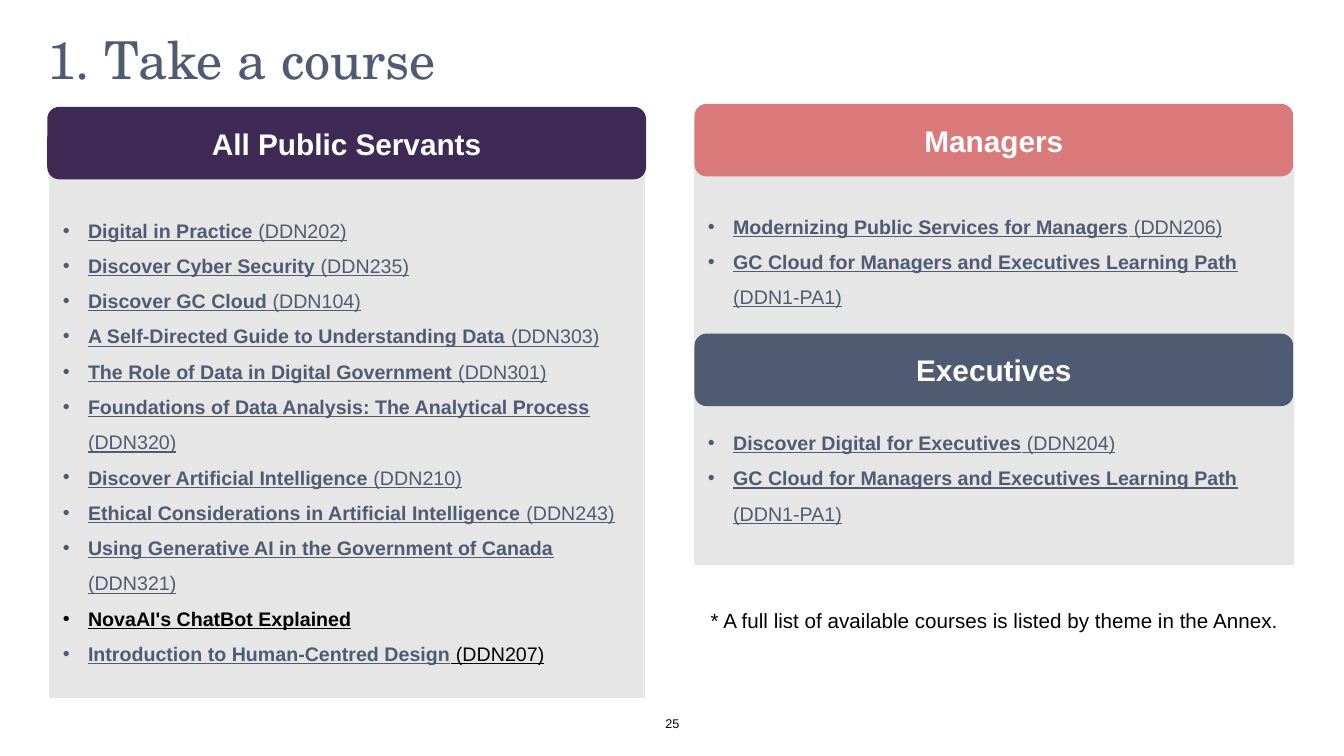
from lxml.etree import SubElement
from pptx import Presentation
from pptx.dml.color import RGBColor
from pptx.enum.shapes import MSO_SHAPE as Shape
from pptx.enum.text import MSO_ANCHOR as Anchor, MSO_AUTO_SIZE as AutoSize, PP_ALIGN as Align
from pptx.oxml.ns import qn
from pptx.util import Pt

SLATE = RGBColor(0x4E, 0x5B, 0x73)
PURPLE = RGBColor(0x3F, 0x2A, 0x56)
CORAL = RGBColor(0xDA, 0x79, 0x7A)
GREY = RGBColor(0xE6, 0xE6, 0xE6)
WHITE = RGBColor(0xFF, 0xFF, 0xFF)
BLACK = RGBColor(0, 0, 0)

LEFT_COURSES = [
    ("Digital in Practice", " (DDN202)", SLATE, SLATE, 0),
    ("Discover Cyber Security", " (DDN235)", SLATE, SLATE, 0),
    ("Discover GC Cloud", " (DDN104)", SLATE, SLATE, 0),
    ("A Self-Directed Guide to Understanding Data", " (DDN303)", SLATE, SLATE, 0),
    ("The Role of Data in Digital Government", " (DDN301)", SLATE, SLATE, 0),
    ("Foundations of Data Analysis: The Analytical Process", " (DDN320)", SLATE, SLATE, 0),
    ("Discover Artificial Intelligence", " (DDN210)", SLATE, SLATE, 0),
    ("Ethical Considerations in Artificial Intelligence", " (DDN243)", SLATE, SLATE, 0),
    ("Using Generative AI in the Government of Canada", " (DDN321)", SLATE, SLATE, 0),
    ("NovaAI's ChatBot Explained", "", BLACK, BLACK, 0),
    ("Introduction to Human-Centred Design", " (DDN207)", SLATE, BLACK, 0),
]
RIGHT_COURSES = [
    ("Modernizing Public Services for Managers", " (DDN206)", SLATE, SLATE, 0),
    ("GC Cloud for Managers and Executives Learning Path", " (DDN1-PA1)", SLATE, SLATE, 0),
    ("Discover Digital for Executives", " (DDN204)", SLATE, SLATE, 79),
    ("GC Cloud for Managers and Executives Learning Path", " (DDN1-PA1)", SLATE, SLATE, 0),
]
PANELS = [
    (35.3, 124.6, 424.8, 373.7, LEFT_COURSES),
    (496.1, 116.6, 427.7, 286.6, RIGHT_COURSES),
]
HEADERS = [
    ("All Public Servants", 33.8, 76.3, PURPLE),
    ("Managers", 496.1, 74.2, CORAL),
    ("Executives", 496.1, 238.3, SLATE),
]
LABELS = [
    ("25", 464.4, 509, 31.7, 15.1, 9, Align.CENTER, Anchor.MIDDLE),
    ("* A full list of available courses is listed by theme in the Annex.",
     507.6, 434.2, 416.2, 18, 14.7, Align.LEFT, Anchor.TOP),
]


def write(paragraph, text, size, color, name="Arial", **formats):
    run = paragraph.add_run()
    run.text = text
    run.font.color.rgb = color
    for key, value in dict(size=Pt(size), name=name, **formats).items():
        setattr(run.font, key, value)


def set_frame(frame, anchor, horizontal=0, vertical=0):
    formats = dict(word_wrap=True, auto_size=AutoSize.NONE, vertical_anchor=anchor,
                   margin_left=Pt(horizontal), margin_right=Pt(horizontal),
                   margin_top=Pt(vertical), margin_bottom=Pt(vertical))
    for key, value in formats.items():
        setattr(frame, key, value)


presentation = Presentation()
presentation.slide_width, presentation.slide_height = Pt(960), Pt(540)
slide = presentation.slides.add_slide(presentation.slide_layouts[5])

title = slide.shapes.title
title.left, title.top, title.width, title.height = Pt(33.8), Pt(24.5), Pt(635.8), Pt(40.3)
set_frame(title.text_frame, Anchor.TOP)
paragraph = title.text_frame.paragraphs[0]
paragraph.alignment, paragraph.line_spacing = Align.LEFT, 0.9
write(paragraph, "1. Take a course", 37.3, SLATE, "TeX Gyre Schola")

for left, top, width, height, courses in PANELS:
    panel = slide.shapes.add_shape(Shape.RECTANGLE, Pt(left), Pt(top), Pt(width), Pt(height))
    panel.shadow.inherit = False
    panel.fill.solid()
    panel.fill.fore_color.rgb = panel.line.color.rgb = GREY
    panel.line.width = Pt(0.75)
    frame = panel.text_frame
    set_frame(frame, Anchor.MIDDLE, 9.6, 4.8)
    for index, (course, code, color, code_color, gap) in enumerate(courses):
        paragraph = frame.add_paragraph() if index else frame.paragraphs[0]
        paragraph.alignment, paragraph.line_spacing = Align.LEFT, 1.5
        if gap:
            paragraph.space_before = Pt(gap)
        properties = paragraph._p.get_or_add_pPr()
        properties.set("marL", str(Pt(18)))
        properties.set("indent", str(-Pt(18)))
        SubElement(properties, qn("a:buFont"), typeface="Arial")
        SubElement(properties, qn("a:buChar"), char="•")
        write(paragraph, course, 14, color, bold=True, underline=True)
        if code:
            write(paragraph, code, 14, code_color, bold=False, underline=True)

for text, left, top, color in HEADERS:
    header = slide.shapes.add_shape(Shape.ROUNDED_RECTANGLE, Pt(left), Pt(top), Pt(427.7), Pt(51.8))
    header.shadow.inherit = False
    header.fill.solid()
    header.fill.fore_color.rgb = color
    header.line.fill.background()
    set_frame(header.text_frame, Anchor.MIDDLE, 7.2, 3.6)
    paragraph = header.text_frame.paragraphs[0]
    paragraph.alignment = Align.CENTER
    write(paragraph, text, 21.3, WHITE, bold=True)

for text, left, top, width, height, size, alignment, anchor in LABELS:
    label = slide.shapes.add_textbox(Pt(left), Pt(top), Pt(width), Pt(height))
    set_frame(label.text_frame, anchor)
    paragraph = label.text_frame.paragraphs[0]
    paragraph.alignment = alignment
    write(paragraph, text, size, BLACK)

presentation.save("out.pptx")
